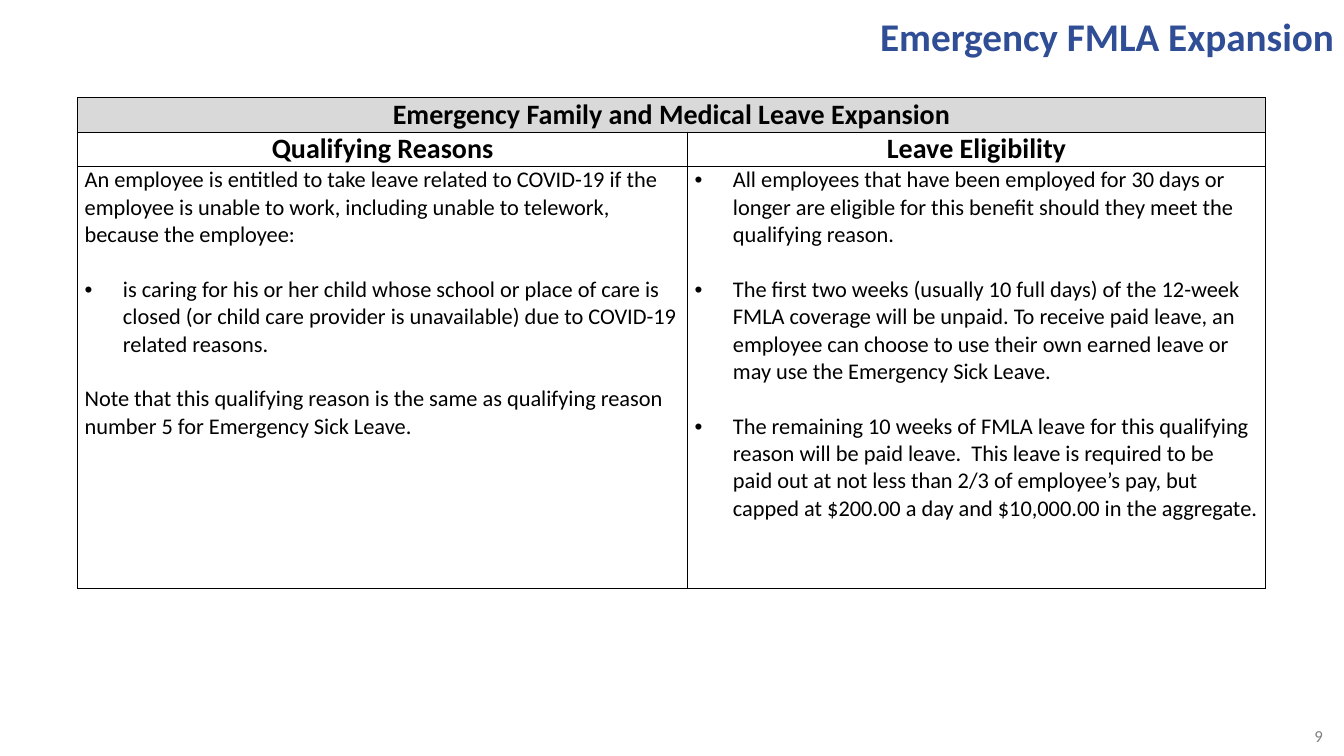
from pptx import Presentation
from pptx.dml.color import RGBColor
from pptx.enum.text import MSO_ANCHOR, PP_ALIGN
from pptx.oxml.ns import qn
from pptx.util import Inches, Pt
from lxml.etree import SubElement

COLORS = {
    "title": "304E96",
    "text": "000000",
    "border": "000000",
    "banner": "D9D9D9",
    "number": "808080",
}
FONT = "Calibri"
TITLE_ONLY = 5
BODY_GAP = Pt(19.5)
BULLET_INDENT = Inches(0.38)

COLUMN_WIDTHS = [6.05, 5.73]
ROW_HEIGHTS = [0.34, 0.34, 4.19]

BANNER = "Emergency Family and Medical Leave Expansion"
HEADINGS = ["Qualifying Reasons", "Leave Eligibility"]
# Each paragraph is (text, has a bullet)
BODIES = [
    [
        ("An employee is entitled to take leave related to COVID-19 if the employee "
         "is unable to work, including unable to telework, because the employee:", False),
        ("is caring for his or her child whose school or place of care is closed (or "
         "child care provider is unavailable) due to COVID-19 related reasons.", True),
        ("Note that this qualifying reason is the same as qualifying reason number 5 "
         "for Emergency Sick Leave.", False),
    ],
    [
        ("All employees that have been employed for 30 days or longer are eligible for "
         "this benefit should they meet the qualifying reason.", True),
        ("The first two weeks (usually 10 full days) of the 12-week FMLA coverage will "
         "be unpaid. To receive paid leave, an employee can choose to use their own "
         "earned leave or may use the Emergency Sick Leave.", True),
        ("The remaining 10 weeks of FMLA leave for this qualifying reason will be paid "
         "leave.  This leave is required to be paid out at not less than 2/3 of "
         "employee’s pay, but capped at $200.00 a day and $10,000.00 in the aggregate.",
         True),
    ],
]


def write(paragraph, text, size, color, bold=False, align=PP_ALIGN.LEFT):
    paragraph.text = text
    paragraph.alignment = align
    for run in paragraph.runs:
        run.font.name = FONT
        run.font.size = Pt(size)
        run.font.bold = bold
        run.font.color.rgb = RGBColor.from_string(COLORS[color])


def place(shape, left, top, width, height):
    shape.left, shape.top = Inches(left), Inches(top)
    shape.width, shape.height = Inches(width), Inches(height)


def add_bullet(paragraph):
    properties = paragraph._p.get_or_add_pPr()
    properties.set("marL", str(BULLET_INDENT))
    properties.set("indent", str(-BULLET_INDENT))
    SubElement(properties, qn("a:buFont"), typeface="Arial")
    SubElement(properties, qn("a:buChar"), char="•")


def add_borders(cell):
    properties = cell._tc.get_or_add_tcPr()
    for side in ("lnL", "lnR", "lnT", "lnB"):
        line = SubElement(properties, qn(f"a:{side}"), w=str(Pt(1)))
        fill = SubElement(line, qn("a:solidFill"))
        SubElement(fill, qn("a:srgbClr"), val=COLORS["border"])


def format_cell(cell):
    cell.margin_left = cell.margin_right = Inches(0.07)
    cell.margin_top = cell.margin_bottom = 0
    add_borders(cell)
    cell.fill.background()


def write_heading(cell, text):
    write(cell.text_frame.paragraphs[0], text, 20, "text", True, PP_ALIGN.CENTER)


def write_body(cell, items):
    frame = cell.text_frame
    for index, (text, bulleted) in enumerate(items):
        paragraph = frame.add_paragraph() if index else frame.paragraphs[0]
        if bulleted:
            add_bullet(paragraph)
        write(paragraph, text, 16, "text")
        if index:
            paragraph.space_before = BODY_GAP


def add_title(slide, text):
    title = slide.shapes.title
    place(title, 3.48, 0.01, 9.85, 0.75)
    title.text_frame.vertical_anchor = MSO_ANCHOR.MIDDLE
    paragraph = title.text_frame.paragraphs[0]
    write(paragraph, text, 28, "title", True, PP_ALIGN.RIGHT)
    paragraph.line_spacing = 0.9


def add_leave_table(slide):
    frame = slide.shapes.add_table(
        len(ROW_HEIGHTS), len(COLUMN_WIDTHS), Inches(0.77), Inches(0.97),
        Inches(sum(COLUMN_WIDTHS)), Inches(sum(ROW_HEIGHTS)))
    table = frame.table
    table.first_row = table.horz_banding = False
    for column, width in zip(table.columns, COLUMN_WIDTHS):
        column.width = Inches(width)
    for row, height in zip(table.rows, ROW_HEIGHTS):
        row.height = Inches(height)
    for cell in table.iter_cells():
        format_cell(cell)

    banner = table.cell(0, 0)
    banner.merge(table.cell(0, 1))
    banner.fill.solid()
    banner.fill.fore_color.rgb = RGBColor.from_string(COLORS["banner"])
    write_heading(banner, BANNER)
    for index, (heading, items) in enumerate(zip(HEADINGS, BODIES)):
        write_heading(table.cell(1, index), heading)
        write_body(table.cell(2, index), items)


def add_slide_number(slide, number):
    box = slide.shapes.add_textbox(
        Inches(12.55), Inches(7.17), Inches(0.67), Inches(0.25))
    frame = box.text_frame
    frame.word_wrap = True
    frame.vertical_anchor = MSO_ANCHOR.MIDDLE
    write(frame.paragraphs[0], number, 12, "number", align=PP_ALIGN.RIGHT)


def main():
    presentation = Presentation()
    presentation.slide_width = Inches(13.33)
    presentation.slide_height = Inches(7.5)
    slide = presentation.slides.add_slide(presentation.slide_layouts[TITLE_ONLY])
    add_title(slide, "Emergency FMLA Expansion")
    add_leave_table(slide)
    add_slide_number(slide, "9")
    presentation.save("out.pptx")


if __name__ == "__main__":
    main()
